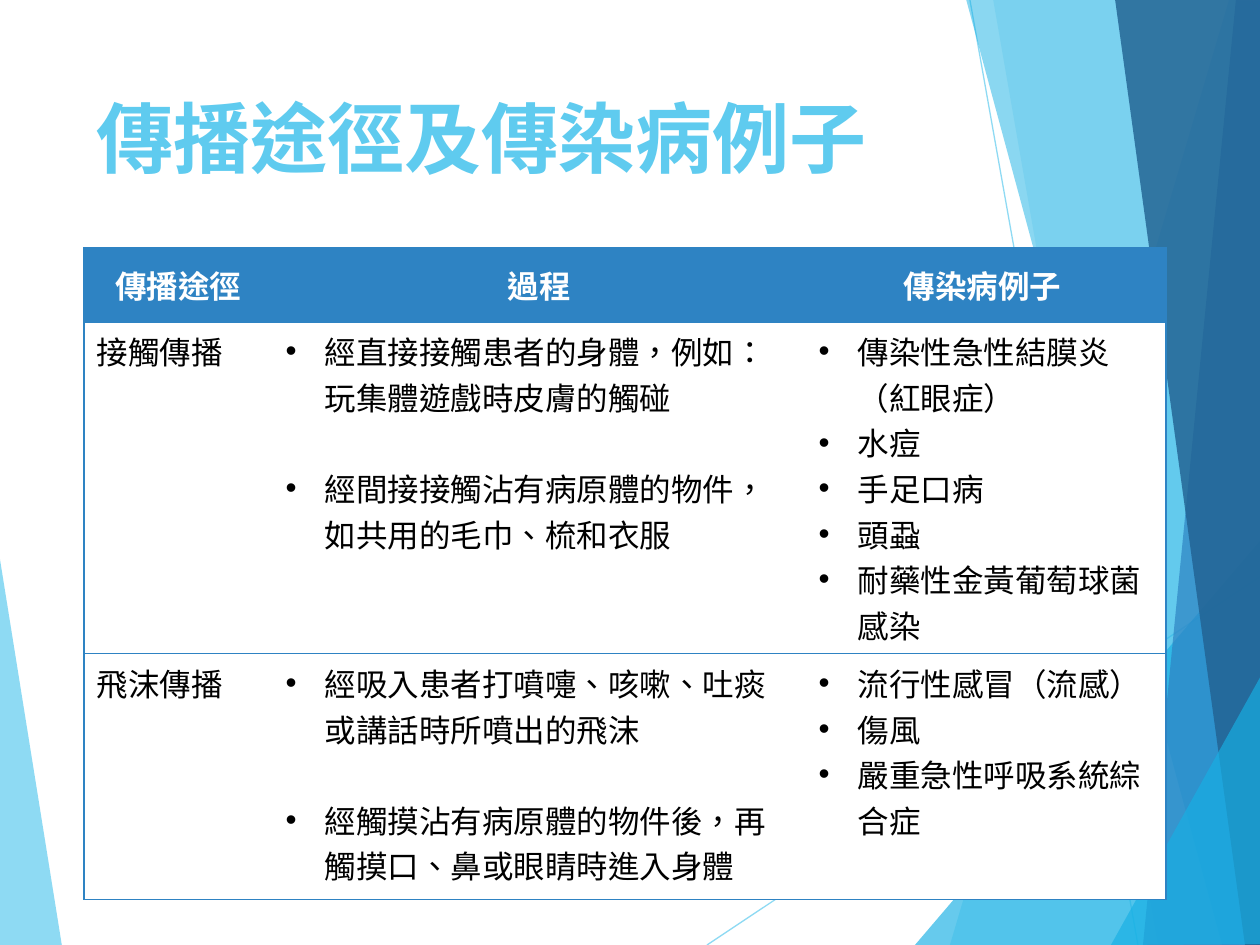
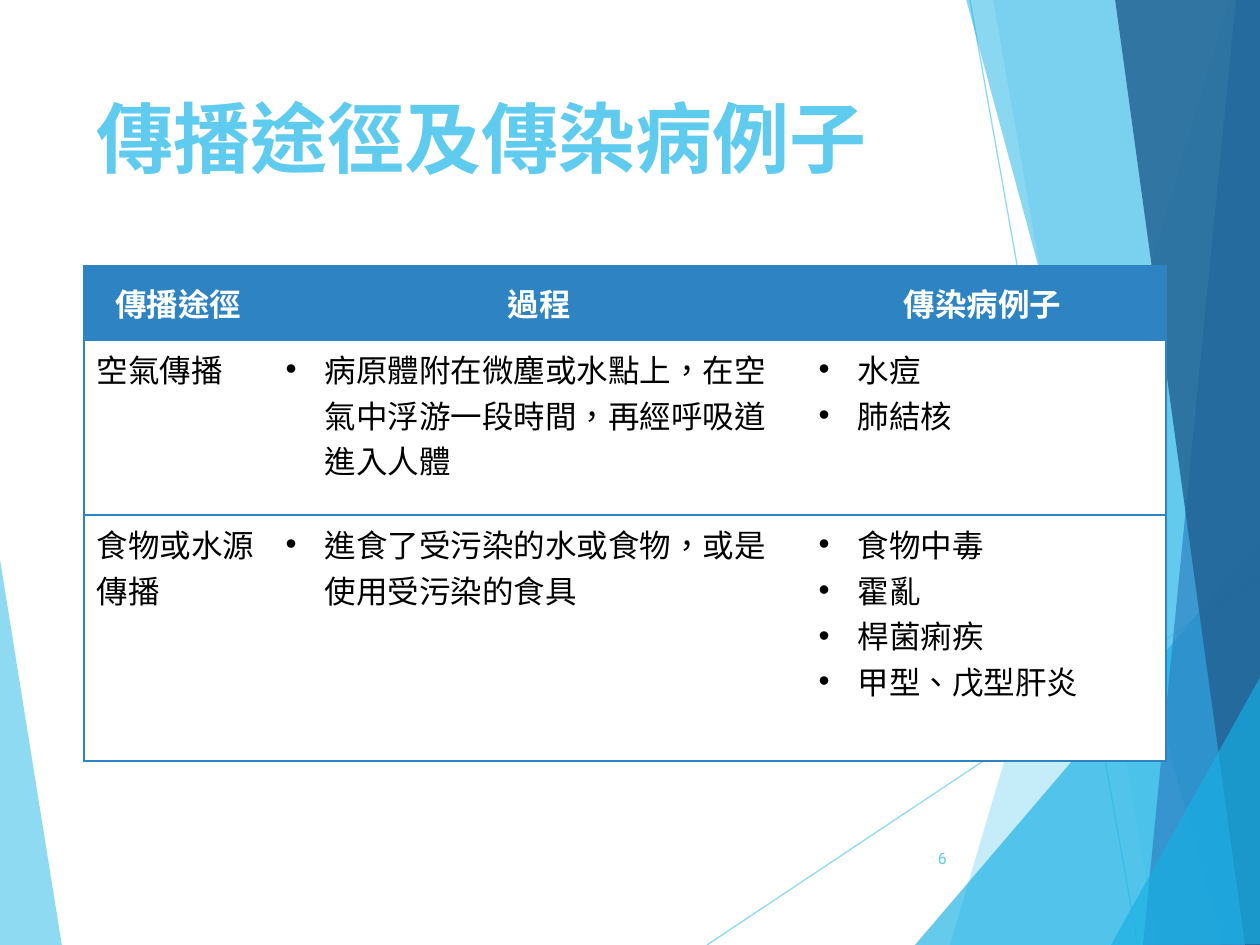
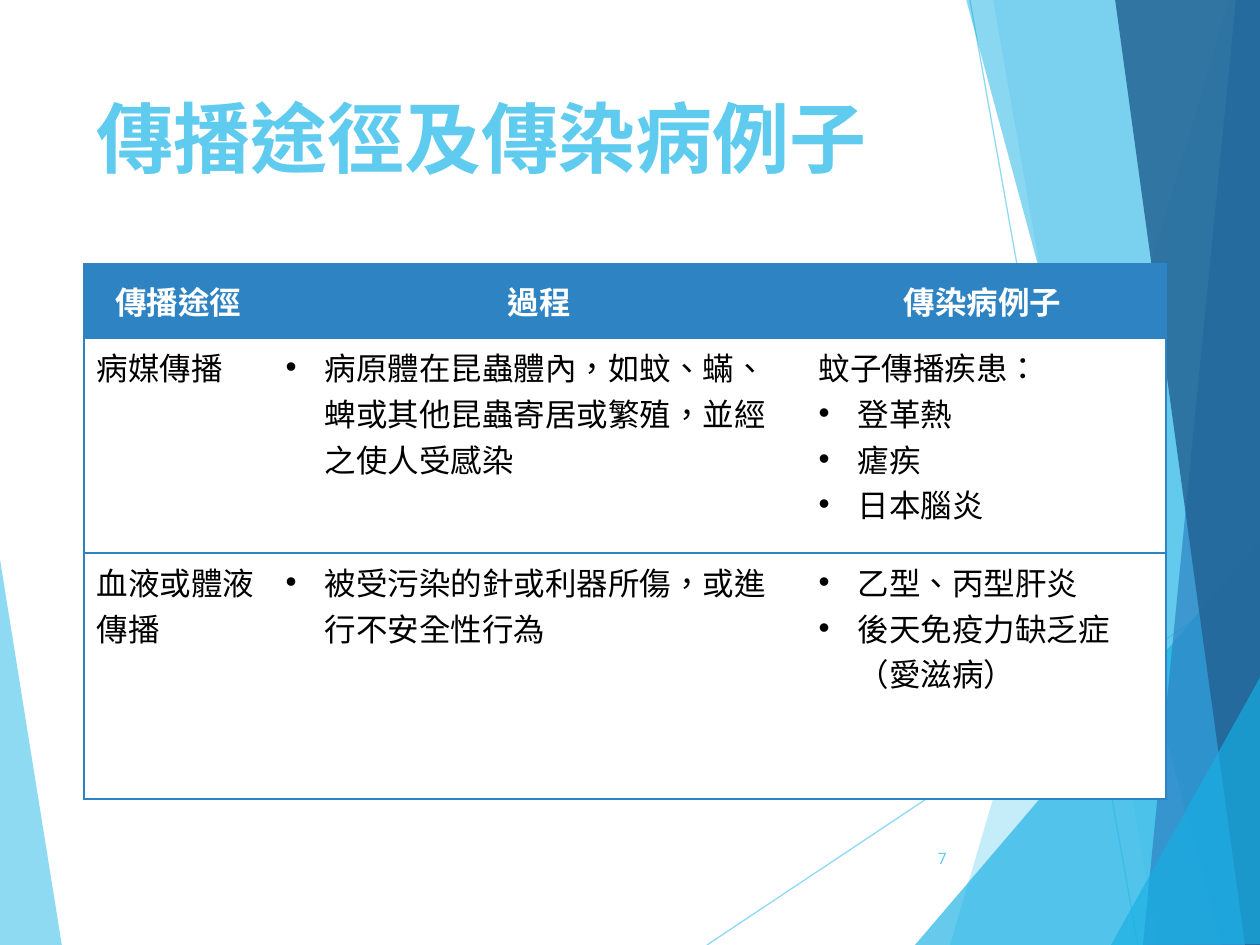
from lxml.etree import SubElement
from pptx import Presentation
from pptx.dml.color import RGBColor
from pptx.enum.lang import MSO_LANGUAGE_ID as LANGUAGE
from pptx.enum.shapes import MSO_CONNECTOR as CONNECTOR
from pptx.enum.text import MSO_ANCHOR as ANCHOR, MSO_AUTO_SIZE as AUTO_SIZE, PP_ALIGN as ALIGN
from pptx.oxml.ns import qn
from pptx.util import Pt

PX = 914400 / 126
COLORS = {
    "sky": "5FCBEF",
    "cyan": "17B0E4",
    "blue": "2E83C3",
    "navy": "226292",
    "white": "FFFFFF",
    "black": "000000",
}
TITLE = "傳播途徑及傳染病例子"
HEADERS = ["傳播途徑", "過程", "傳染病例子 "]
COLUMN_WIDTHS = [189, 533, 360]
HEADER_HEIGHT = 74
LAST_ROW_HEIGHT = 246
HANGING_INDENT = 39

RAYS = [(707, 945, 1261, 576), (970, 0, 1138, 945)]
FACETS = [
    ("sky", 70, [(-1, 553), (62, 946), (-1, 945)]),
    ("sky", 36, [(1229, 0), (950, 945), (1262, 946), (1261, 1)]),
    ("sky", 20, [(993, -1), (1158, 945), (1261, 945), (1261, -1)]),
    ("cyan", 66, [(915, 945), (1260, 541), (1261, 945)]),
    ("cyan", 50, [(966, -1), (1222, 945), (1261, 944), (1261, -1)]),
    ("blue", 70, [(1236, -1), (1143, 945), (1261, 945), (1260, -1)]),
    ("navy", 82, [(1115, -1), (1245, 945), (1262, 945), (1260, -1)]),
    ("cyan", 66, [(1111, 945), (1262, 674), (1262, 944)]),
]

SLIDES = [
    {
        "number": None, "top": 248, "first_row": 315,
        "rows": [
            [["接觸傳播"],
             ["經直接接觸患者的身體，例如：玩集體遊戲時皮膚的觸碰",
              "經間接接觸沾有病原體的物件，如共用的毛巾、梳和衣服"],
             ["傳染性急性結膜炎（紅眼症）", "水痘", "手足口病", "頭蝨", "耐藥性金黃葡萄球菌感染"]],
            [["飛沫傳播"],
             ["經吸入患者打噴嚏、咳嗽、吐痰或講話時所噴出的飛沫",
              "經觸摸沾有病原體的物件後，再觸摸口、鼻或眼睛時進入身體"],
             ["流行性感冒（流感）", "傷風", "嚴重急性呼吸系統綜合症"]],
        ],
    },
    {
        "number": "6", "top": 266, "first_row": 175,
        "rows": [
            [["空氣傳播"],
             ["病原體附在微塵或水點上，在空氣中浮游一段時間，再經呼吸道進入人體"],
             ["水痘", "肺結核"]],
            [["食物或水源傳播"],
             ["進食了受污染的水或食物，或是使用受污染的食具"],
             ["食物中毒", "霍亂", "桿菌痢疾", "甲型、戊型肝炎"]],
        ],
    },
    {
        "number": "7", "top": 264, "first_row": 215,
        "rows": [
            [["病媒傳播"],
             ["病原體在昆蟲體內，如蚊、蟎、蜱或其他昆蟲寄居或繁殖，並經之使人受感染"],
             ["蚊子傳播疾患：", "登革熱", "瘧疾", "日本腦炎"]],
            [["血液或體液傳播"],
             ["被受污染的針或利器所傷，或進行不安全性行為"],
             ["乙型、丙型肝炎", "後天免疫力缺乏症（愛滋病）"]],
        ],
    },
]


def paint(fill, color, opacity=100):
    fill.solid()
    fill.fore_color.rgb = RGBColor.from_string(COLORS[color])
    if opacity < 100:
        color_element = fill._xPr.find(".//" + qn("a:srgbClr"))
        SubElement(color_element, qn("a:alpha"), val=str(opacity * 1000))


def add_run(paragraph, text, font, size, color, bold=False):
    run = paragraph.add_run()
    run.text = text
    run.font.name = font
    run.font.size = Pt(size)
    run.font.bold = bold
    run.font.color.rgb = RGBColor.from_string(COLORS[color])
    run.font.language_id = LANGUAGE.TRADITIONAL_CHINESE


presentation = Presentation()
presentation.slide_width = round(1260 * PX)
presentation.slide_height = round(945 * PX)
layout = presentation.slide_layouts[5]
slides = [presentation.slides.add_slide(layout) for _ in SLIDES]

backdrop = []
for ray in RAYS:
    line = slides[0].shapes.add_connector(CONNECTOR.STRAIGHT, *[round(value * PX) for value in ray])
    line.line.width = Pt(0.75)
    paint(line.line.fill, "sky", 70)
    SubElement(line.element.spPr, qn("a:effectLst"))
    backdrop.append(line)
for color, opacity, points in FACETS:
    builder = slides[0].shapes.build_freeform(*points[0], scale=PX)
    builder.add_line_segments(points[1:], close=True)
    facet = builder.convert_to_shape()
    facet.shadow.inherit = False
    facet.line.fill.background()
    paint(facet.fill, color, opacity)
    backdrop.append(facet)
for shape in backdrop:
    layout.shapes.element.append(shape.element)

for slide, content in zip(slides, SLIDES):
    title = slide.shapes.title
    title.left, title.top, title.width, title.height = [round(v * PX) for v in (84, 84, 874, 111)]
    title.text_frame.auto_size = AUTO_SIZE.NONE
    title.text_frame.vertical_anchor = ANCHOR.TOP
    paragraph = title.text_frame.paragraphs[0]
    paragraph.alignment = ALIGN.LEFT
    add_run(paragraph, TITLE, "Roboto", 44, "sky", True)

    if content["number"]:
        number_box = slide.shapes.add_textbox(*[round(v * PX) for v in (888, 833, 71, 50)])
        number_box.text_frame.word_wrap = True
        number_box.text_frame.vertical_anchor = ANCHOR.MIDDLE
        paragraph = number_box.text_frame.paragraphs[0]
        paragraph.alignment = ALIGN.RIGHT
        add_run(paragraph, content["number"], "Roboto", 9, "sky")

    row_heights = [HEADER_HEIGHT, content["first_row"], LAST_ROW_HEIGHT]
    frame = [84, content["top"], sum(COLUMN_WIDTHS), sum(row_heights)]
    table = slide.shapes.add_table(3, 3, *[round(v * PX) for v in frame]).table
    table.horz_banding = False
    for column, width in zip(table.columns, COLUMN_WIDTHS):
        column.width = round(width * PX)
    for row, height in zip(table.rows, row_heights):
        row.height = round(height * PX)

    rows = [[[header] for header in HEADERS]] + content["rows"]
    for row_index, row in enumerate(rows):
        is_header = row_index == 0
        for column_index, texts in enumerate(row):
            cell = table.cell(row_index, column_index)
            cell.vertical_anchor = ANCHOR.MIDDLE if is_header else ANCHOR.TOP
            cell_properties = cell._tc.get_or_add_tcPr()
            edges = {"lnL": column_index == 0, "lnR": column_index == 2, "lnT": True, "lnB": True}
            for edge, visible in edges.items():
                border = SubElement(cell_properties, qn("a:" + edge), w=str(Pt(1)))
                if visible:
                    border_fill = SubElement(border, qn("a:solidFill"))
                    SubElement(border_fill, qn("a:srgbClr"), val=COLORS["blue"])
                else:
                    SubElement(border, qn("a:noFill"))
            paint(cell.fill, "blue" if is_header else "white")

            for text_index, text in enumerate(texts):
                text_frame = cell.text_frame
                paragraph = text_frame.add_paragraph() if text_index else text_frame.paragraphs[0]
                paragraph.alignment = ALIGN.CENTER if is_header else ALIGN.LEFT
                if column_index == 1 and text_index < len(texts) - 1:
                    paragraph.space_after = Pt(26)
                if not is_header and column_index > 0 and not text.endswith("："):
                    properties = paragraph._p.get_or_add_pPr()
                    properties.set("marL", str(round(HANGING_INDENT * PX)))
                    properties.set("indent", str(-round(HANGING_INDENT * PX)))
                    SubElement(properties, qn("a:buFont"), typeface="Arial")
                    SubElement(properties, qn("a:buChar"), char="•")
                add_run(paragraph, text, "Noto Sans CJK SC", 18, "white" if is_header else "black", is_header)

presentation.save("out.pptx")
